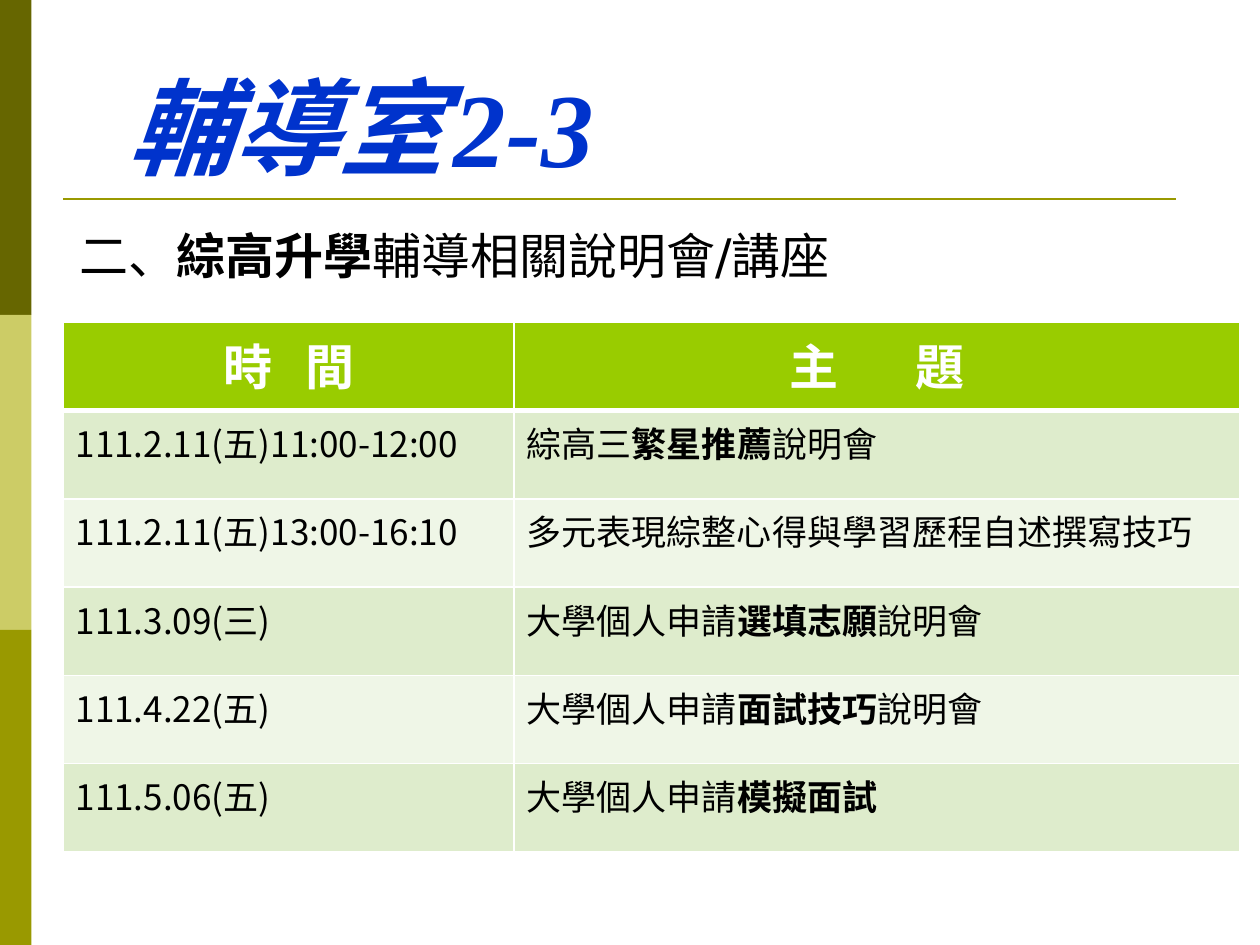
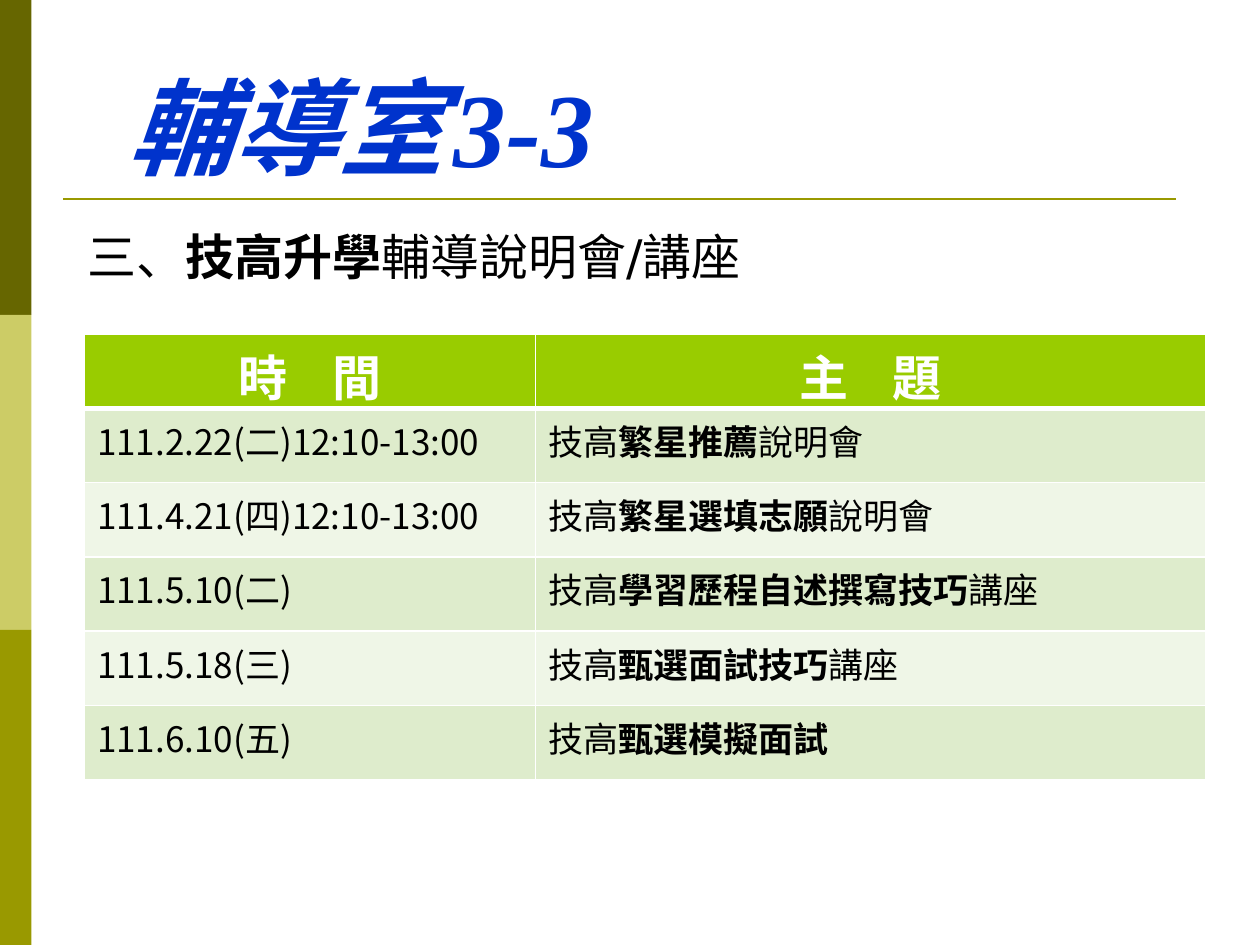
from lxml import etree
from pptx import Presentation
from pptx.dml.color import RGBColor
from pptx.enum import shapes, text
from pptx.oxml.ns import qn
from pptx.util import Inches, Pt

COLORS = {
    "dark": "666600", "pale": "CCCC66", "olive": "999900", "title": "0033CC",
    "header": "99CC00", "band": "DEECCC", "light": "EFF6E7",
    "white": "FFFFFF", "black": "000000",
}
TITLE_FONT, BODY_FONT, CJK_FONT = "Times New Roman", "DejaVu Sans", "Noto Sans CJK SC"

SLIDES = [
    {
        "number": "2-3",
        "heading": "二、*綜高升學*輔導相關說明會/講座",
        "heading_at": (0.53, 1.74), "heading_indent": 0,
        "table_at": (0.5, 2.56), "columns": (3.58, 5.76), "row_height": 0.7,
        "header_gaps": (12.6, 37.7),
        "rows": [
            ("111.2.11(五)11:00-12:00", "綜高三*繁星推薦*說明會"),
            ("111.2.11(五)13:00-16:10", "多元表現綜整心得與學習歷程自述撰寫技巧"),
            ("111.3.09(三)", "大學個人申請*選填志願*說明會"),
            ("111.4.22(五)", "大學個人申請*面試技巧*說明會"),
            ("111.5.06(五)", "大學個人申請*模擬面試*"),
        ],
    },
    {
        "number": "3-3",
        "heading": "三、*技高升學*輔導說明會/講座",
        "heading_at": (0.5, 1.75), "heading_indent": 0.1,
        "table_at": (0.67, 2.65), "columns": (3.58, 5.32), "row_height": 0.59,
        "header_gaps": (18.9, 18.9),
        "rows": [
            ("111.2.22(二)12:10-13:00", "技高*繁星推薦*說明會"),
            ("111.4.21(四)12:10-13:00", "技高*繁星選填志願*說明會"),
            ("111.5.10(二)", "技高*學習歷程自述撰寫技巧*講座"),
            ("111.5.18(三)", "技高*甄選面試技巧*講座"),
            ("111.6.10(五)", "技高*甄選模擬面試*"),
        ],
    },
]


def rgb(name):
    return RGBColor.from_string(COLORS[name])


def style(p, size, font, color):
    p.font.size = Pt(size)
    p.font.name = font
    p.font.color.rgb = rgb(color)
    fonts = p._p.pPr.find(qn("a:defRPr"))
    etree.SubElement(fonts, qn("a:ea")).set("typeface", CJK_FONT)


def indent_first_line(p, inches):
    pPr = p._p.get_or_add_pPr()
    pPr.set("marL", "0")
    pPr.set("indent", str(Inches(inches)))


def add_tab_stop(p, inches):
    tabs = etree.Element(qn("a:tabLst"))
    etree.SubElement(tabs, qn("a:tab"), pos=str(Inches(inches)), algn="l")
    p._p.pPr.find(qn("a:defRPr")).addprevious(tabs)


def add_marked_runs(p, marked):
    for i, part in enumerate(marked.split("*")):
        if part:
            r = p.add_run()
            r.text = part
            r.font.bold = i % 2 == 1


def add_frame(s):
    for i, color in enumerate(("dark", "pale", "olive")):
        sp = s.shapes.add_shape(shapes.MSO_SHAPE.RECTANGLE, 0, Inches(2.5 * i),
                                Inches(0.25), Inches(2.5))
        sp.shadow.inherit = False
        sp.fill.solid()
        sp.fill.fore_color.rgb = rgb(color)
        sp.line.fill.background()
    rule = s.shapes.add_connector(shapes.MSO_CONNECTOR.STRAIGHT, Inches(0.5),
                                  Inches(1.58), Inches(9.33), Inches(1.58))
    rule.line.color.rgb = rgb("olive")
    rule.line.width = Pt(1.5)
    etree.SubElement(rule.element.spPr, qn("a:effectLst"))


def set_title(s, number):
    title = s.shapes.title
    title.left, title.top = Inches(0.5), Inches(0.3)
    title.width, title.height = Inches(9), Inches(1.25)
    tf = title.text_frame
    tf.auto_size = text.MSO_AUTO_SIZE.NONE
    tf.vertical_anchor = text.MSO_ANCHOR.BOTTOM
    p = tf.paragraphs[0]
    p.add_run().text = f"輔導室\t{number}"
    p.alignment = text.PP_ALIGN.LEFT
    style(p, 60, TITLE_FONT, "title")
    p.font.bold = p.font.italic = True
    indent_first_line(p, 0.42)
    add_tab_stop(p, 5.21)


def add_heading(s, marked, at, indent):
    left, top = at
    tb = s.shapes.add_textbox(Inches(left), Inches(top), Inches(9), Inches(0.7))
    tb.text_frame.word_wrap = True
    p = tb.text_frame.paragraphs[0]
    add_marked_runs(p, marked)
    p.space_before = Pt(3.6)
    style(p, 28, BODY_FONT, "black")
    indent_first_line(p, indent)


def set_borders(cell, top=1, bottom=1):
    tcPr = cell._tc.get_or_add_tcPr()
    widths = {"lnL": 1, "lnR": 1, "lnT": top, "lnB": bottom}
    for i, (side, width) in enumerate(widths.items()):
        ln = etree.Element(qn(f"a:{side}"), w=str(Pt(width)))
        fill = etree.SubElement(ln, qn("a:solidFill"))
        etree.SubElement(fill, qn("a:srgbClr"), val=COLORS["white"])
        tcPr.insert(i, ln)


def fill_cell(cell, color, **borders):
    cell.fill.solid()
    cell.fill.fore_color.rgb = rgb(color)
    set_borders(cell, **borders)


def add_header_cell(cell, label, gap):
    p = cell.text_frame.paragraphs[0]
    for char in (label[0], " ", label[1]):
        r = p.add_run()
        r.text = char
        r.font.bold = True
        if char == " ":
            r.font._element.set("spc", str(round(gap * 100)))
    p.alignment = text.PP_ALIGN.CENTER
    style(p, 28, CJK_FONT, "white")
    fill_cell(cell, "header", bottom=3)


def add_schedule(s, rows, at, columns, row_height, gaps):
    left, top = at
    count = len(rows) + 1
    table = s.shapes.add_table(count, len(columns), Inches(left), Inches(top),
                               Inches(sum(columns)), Inches(row_height * count)).table
    for column, width in zip(table.columns, columns):
        column.width = Inches(width)
    for row in table.rows:
        row.height = Inches(row_height)
    for c, (label, gap) in enumerate(zip(("時間", "主題"), gaps)):
        add_header_cell(table.cell(0, c), label, gap)
    for i, row in enumerate(rows, 1):
        for c, marked in enumerate(row):
            cell = table.cell(i, c)
            p = cell.text_frame.paragraphs[0]
            add_marked_runs(p, marked)
            style(p, 20, CJK_FONT, "black")
            fill_cell(cell, "band" if i % 2 else "light", top=3 if i == 1 else 1)


def main():
    prs = Presentation()
    prs.slide_width, prs.slide_height = Inches(10), Inches(7.5)
    for d in SLIDES:
        s = prs.slides.add_slide(prs.slide_layouts[5])
        add_frame(s)
        add_heading(s, d["heading"], d["heading_at"], d["heading_indent"])
        set_title(s, d["number"])
        add_schedule(s, d["rows"], d["table_at"], d["columns"],
                     d["row_height"], d["header_gaps"])
    prs.save("out.pptx")


if __name__ == "__main__":
    main()
